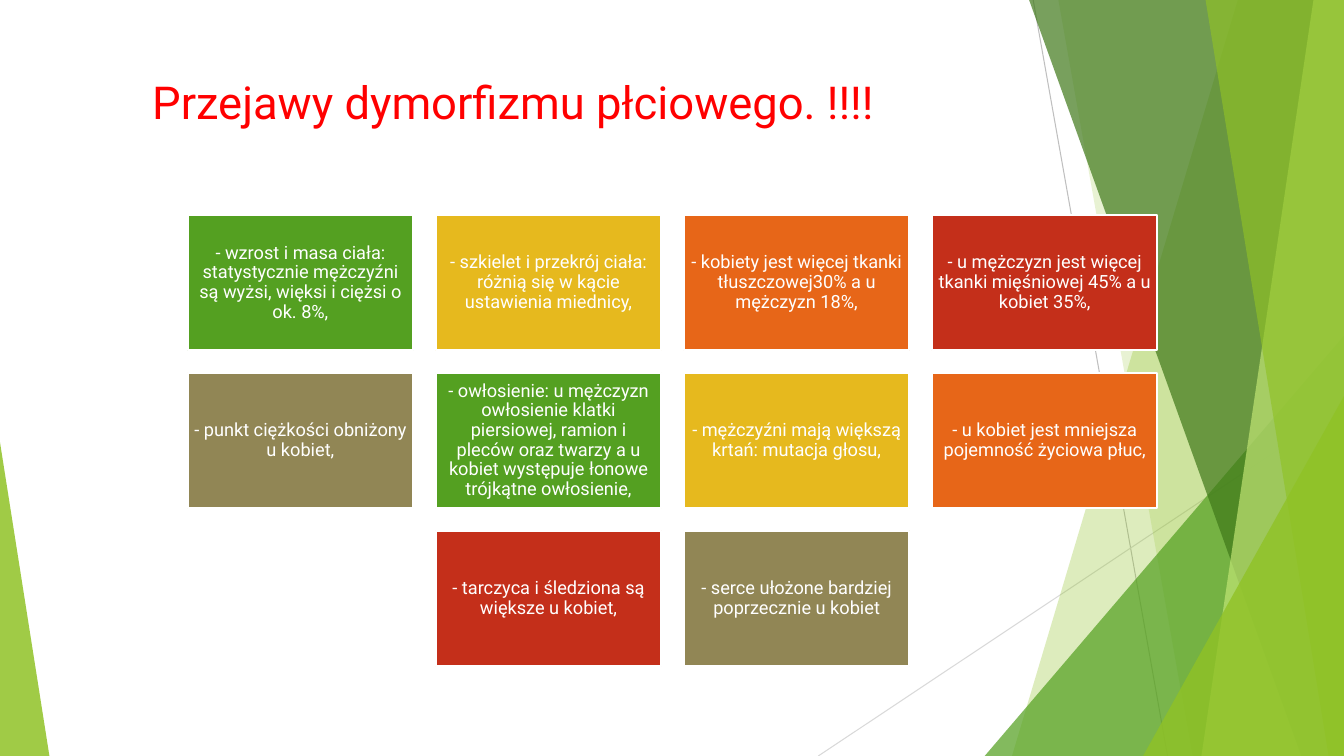
from lxml import etree
from pptx import Presentation
from pptx.dml.color import RGBColor
from pptx.enum import shapes, text
from pptx.oxml import ns
from pptx.util import Pt

GREEN = RGBColor(0x54, 0xA0, 0x21)
GOLD = RGBColor(0xE6, 0xB9, 0x1E)
ORANGE = RGBColor(0xE7, 0x66, 0x18)
BRICK = RGBColor(0xC4, 0x2F, 0x1A)
OLIVE = RGBColor(0x91, 0x86, 0x55)
LIME = RGBColor(0x90, 0xC2, 0x26)
PALE_LIME = RGBColor(0xC0, 0xE4, 0x74)
DARK_GREEN = RGBColor(0x3F, 0x78, 0x19)
GREY = RGBColor(0xBF, 0xBF, 0xBF)
LIGHT_GREY = RGBColor(0xD9, 0xD9, 0xD9)
RED = RGBColor(0xFF, 0x00, 0x00)
WHITE = RGBColor(0xFF, 0xFF, 0xFF)
FONT = "Roboto"

# Content
TITLE = "Przejawy dymorfizmu płciowego. !!!!"
TRAITS = [
    "- wzrost i masa ciała: statystycznie mężczyźni są wyżsi, więksi i ciężsi o ok. 8%,",
    "- szkielet i przekrój ciała: różnią się w kącie ustawienia miednicy,",
    "- kobiety jest więcej tkanki tłuszczowej30% a u mężczyzn 18%,",
    "- u mężczyzn jest więcej tkanki mięśniowej 45% a u kobiet 35%,",
    "- punkt ciężkości obniżony u kobiet,",
    "- owłosienie: u mężczyzn owłosienie klatki piersiowej, ramion i pleców oraz twarzy "
    "a u kobiet występuje łonowe trójkątne owłosienie,",
    "- mężczyźni mają większą krtań: mutacja głosu,",
    "- u kobiet jest mniejsza pojemność życiowa płuc,",
    "- tarczyca i śledziona są większe u kobiet,",
    "- serce ułożone bardziej poprzecznie u kobiet",
]
CARD_COLORS = [GREEN, GOLD, ORANGE, BRICK, OLIVE]

# Layout, in points
WIDTH, HEIGHT = 960, 540
COLUMNS = 4
GRID_LEFT, GRID_TOP = 134, 153.6
CARD_WIDTH = 161.1
CARD_HEIGHT = CARD_WIDTH * 0.6
GAP = CARD_WIDTH * 0.1

# Thin lines: start, end, color
LINES = [((738, 0), (834, HEIGHT), GREY), ((WIDTH, 290), (584.5, HEIGHT), LIGHT_GREY)]
# Bands reach the right edge: ("band", top x, bottom x, color, opacity %)
# Triangles stand on the bottom edge: ("triangle", (left, top, width, apex), color, opacity %)
DECORATION = [
    ("band", (884.2, 722.9), LIME, 30),
    ("band", (756, 851.8), LIME, 20),
    ("triangle", (703.4, 239.8, 256.6, 1), GREEN, 72),
    ("band", (735.1, 929.5), DARK_GREEN, 70),
    ("band", (938.2, 858.2), PALE_LIME, 70),
    ("band", (861.1, 949), LIME, 65),
    ("triangle", (816.5, 283, 143.5, 1), LIME, 80),
    ("triangle", (0, 316, 35.3, 0), LIME, 85),
]


def fill_shape(shape, color, opacity=100):
    shape.shadow.inherit = False
    shape.fill.solid()
    shape.fill.fore_color.rgb = color
    if opacity < 100:
        color_element = shape._element.spPr.find(ns.qn("a:solidFill"))[0]
        etree.SubElement(color_element, ns.qn("a:alpha"), val=str(opacity * 1000))


def add_line(slide, start, end, color):
    points = [Pt(value) for value in start + end]
    line = slide.shapes.add_connector(shapes.MSO_CONNECTOR.STRAIGHT, *points)
    line.line.color.rgb = color
    line.line.width = Pt(0.75)
    etree.SubElement(line._element.spPr, ns.qn("a:effectLst"))


def add_decoration(slide, kind, geometry, color, opacity):
    if kind == "band":
        top_x, bottom_x = geometry
        corners = [(WIDTH, 0), (WIDTH, HEIGHT), (bottom_x, HEIGHT)]
        builder = slide.shapes.build_freeform(Pt(top_x), 0)
        builder.add_line_segments([(Pt(x), Pt(y)) for x, y in corners], close=True)
        shape = builder.convert_to_shape()
    else:
        left, top, width, apex = geometry
        shape = slide.shapes.add_shape(
            shapes.MSO_SHAPE.ISOSCELES_TRIANGLE,
            Pt(left), Pt(top), Pt(width), Pt(HEIGHT - top))
        shape.adjustments[0] = apex
    fill_shape(shape, color, opacity)
    shape.line.fill.background()


def format_text(frame, size, color, alignment, anchor):
    frame.word_wrap = True
    frame.auto_size = text.MSO_AUTO_SIZE.NONE
    frame.vertical_anchor = anchor
    paragraph = frame.paragraphs[0]
    paragraph.alignment = alignment
    font = paragraph.runs[0].font
    font.name, font.size, font.color.rgb = FONT, Pt(size), color


def add_card(slide, left, top, trait, color):
    card = slide.shapes.add_shape(
        shapes.MSO_SHAPE.RECTANGLE, Pt(left), Pt(top), Pt(CARD_WIDTH), Pt(CARD_HEIGHT))
    fill_shape(card, color)
    card.line.color.rgb = WHITE
    card.line.width = Pt(1.5)
    frame = card.text_frame
    frame.text = trait
    frame.margin_left = frame.margin_right = Pt(3.6)
    frame.margin_top = frame.margin_bottom = Pt(3.6)
    format_text(frame, 13, WHITE, text.PP_ALIGN.CENTER, text.MSO_ANCHOR.MIDDLE)
    frame.paragraphs[0].line_spacing = 0.9


def main():
    presentation = Presentation()
    presentation.slide_width, presentation.slide_height = Pt(WIDTH), Pt(HEIGHT)
    slide = presentation.slides.add_slide(presentation.slide_layouts[5])

    # Background decoration
    for line in LINES:
        add_line(slide, *line)
    for part in DECORATION:
        add_decoration(slide, *part)

    # Title, in front of the decoration
    title = slide.shapes.title
    slide.shapes._spTree.append(title._element)
    title.left, title.top, title.width, title.height = Pt(101.5), Pt(48), Pt(803), Pt(86.4)
    title.text_frame.text = TITLE
    title.text_frame.margin_top = Pt(5)
    format_text(title.text_frame, 32.4, RED, text.PP_ALIGN.LEFT, text.MSO_ANCHOR.TOP)

    # Cards, with a short last row centred
    for index, trait in enumerate(TRAITS):
        row, column = divmod(index, COLUMNS)
        row_length = min(COLUMNS, len(TRAITS) - row * COLUMNS)
        column += (COLUMNS - row_length) / 2
        left = GRID_LEFT + column * (CARD_WIDTH + GAP)
        top = GRID_TOP + row * (CARD_HEIGHT + GAP)
        add_card(slide, left, top, trait, CARD_COLORS[index % len(CARD_COLORS)])

    presentation.save("out.pptx")


if __name__ == "__main__":
    main()
